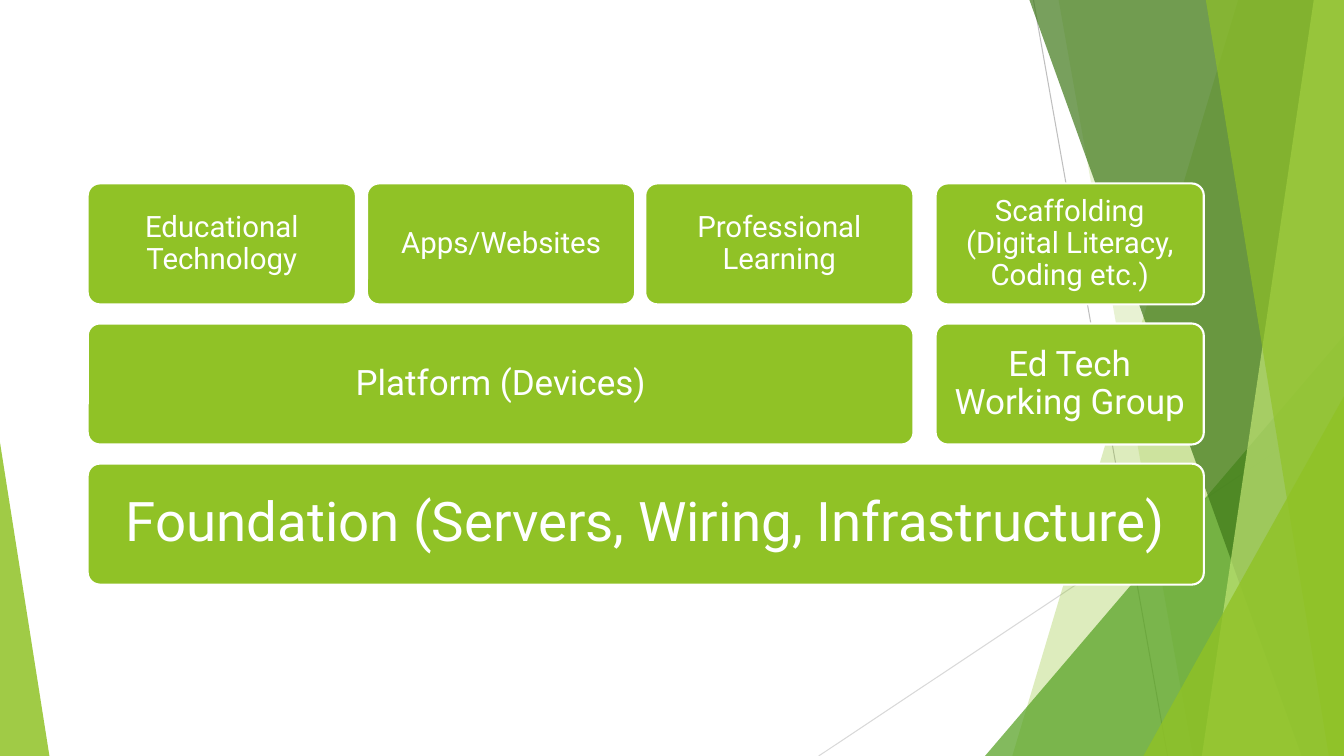
from lxml import etree
from pptx import Presentation
from pptx.dml.color import RGBColor
from pptx.enum.shapes import MSO_CONNECTOR, MSO_SHAPE
from pptx.enum.text import MSO_ANCHOR, PP_ALIGN
from pptx.oxml.ns import qn
from pptx.util import Inches, Pt

LINE = MSO_CONNECTOR.STRAIGHT
TRIANGLE, ROUNDED = MSO_SHAPE.ISOSCELES_TRIANGLE, MSO_SHAPE.ROUNDED_RECTANGLE
MIDDLE, CENTER = MSO_ANCHOR.MIDDLE, PP_ALIGN.CENTER

GREEN, WHITE = "90C226", "FFFFFF"
FONT = "Roboto"
W, H = 13.33, 7.5

# Block grid: four columns, the last one set apart, and three rows
COL_X = [0.87, 3.64, 6.4, 9.28]
COL_W = 2.66
ROW_Y, ROW_PITCH, ROW_H = 1.82, 1.39, 1.2

# Row, first column, last column, text, size, inset
BLOCKS = [
    (2, 0, 3, "Foundation (Servers, Wiring, Infrastructure)", 39, 0.16),
    (1, 0, 2, "Platform (Devices)", 25, 0.1),
    (0, 0, 0, "Educational Technology", 21, 0.09),
    (0, 1, 1, "Apps/Websites", 21, 0.09),
    (0, 2, 2, "Professional Learning", 21, 0.09),
    (1, 3, 3, "Ed Tech Working Group", 25, 0.1),
    (0, 3, 3, "Scaffolding (Digital Literacy, Coding etc.)", 21, 0.09),
]


def rgb(color):
    return RGBColor.from_string(color)


def set_fill(sp, color, opacity=100):
    sp.shadow.inherit = False
    sp.fill.solid()
    sp.fill.fore_color.rgb = rgb(color)
    if opacity < 100:
        clr = sp.fill._xPr.find(qn("a:solidFill"))[0]
        etree.SubElement(clr, qn("a:alpha"), val=str(opacity * 1000))


def add_line(s, x1, y1, x2, y2, color):
    cn = s.shapes.add_connector(LINE, Inches(x1), Inches(y1), Inches(x2), Inches(y2))
    cn.line.color.rgb = rgb(color)
    cn.line.width = Pt(0.75)
    etree.SubElement(cn._element.spPr, qn("a:effectLst"))


def add_band(s, top_x, bottom_x, color, opacity):
    """Band from a slanted left edge to the right edge of the slide."""
    points = [(W, 0), (W, H), (bottom_x, H)]
    fb = s.shapes.build_freeform(Inches(top_x), 0)
    fb.add_line_segments([(Inches(x), Inches(y)) for x, y in points])
    sp = fb.convert_to_shape()
    set_fill(sp, color, opacity)
    sp.line.fill.background()


def add_triangle(s, x, y, w, apex, color, opacity):
    """Triangle standing on the bottom edge of the slide."""
    sp = s.shapes.add_shape(TRIANGLE, Inches(x), Inches(y), Inches(w), Inches(H - y))
    sp.adjustments[0] = apex
    set_fill(sp, color, opacity)
    sp.line.fill.background()


def add_block(s, row, first, last, text, size, inset):
    x, y = COL_X[first], ROW_Y + row * ROW_PITCH
    w = COL_X[last] + COL_W - x
    sp = s.shapes.add_shape(ROUNDED, Inches(x), Inches(y), Inches(w), Inches(ROW_H))
    sp.adjustments[0] = 0.1
    set_fill(sp, GREEN)
    sp.line.color.rgb = rgb(WHITE)
    sp.line.width = Pt(1.5)

    tf = sp.text_frame
    tf.word_wrap = True
    tf.vertical_anchor = MIDDLE
    for side in ("left", "top", "right", "bottom"):
        setattr(tf, f"margin_{side}", Inches(inset))
    p = tf.paragraphs[0]
    p.alignment = CENTER
    p.line_spacing = 0.9
    r = p.add_run()
    r.text = text
    for name, value in {"name": FONT, "size": Pt(size)}.items():
        setattr(r.font, name, value)
    r.font.color.rgb = rgb(WHITE)


def main():
    prs = Presentation()
    prs.slide_width, prs.slide_height = Inches(W), Inches(H)
    s = prs.slides.add_slide(prs.slide_layouts[6])

    # Background facets, back to front
    add_line(s, 10.25, 0, 11.58, H, "BFBFBF")
    add_line(s, W, 4.03, 8.12, H, "D9D9D9")
    add_band(s, 12.28, 10.04, GREEN, 30)
    add_band(s, 10.5, 11.83, GREEN, 20)
    add_triangle(s, 9.77, 3.33, 3.56, 1, "54A021", 72)
    add_band(s, 10.21, 12.91, "3F7819", 70)
    add_band(s, 13.03, 11.92, "C0E474", 70)
    add_band(s, 11.96, 13.18, GREEN, 65)
    add_triangle(s, 11.34, 3.93, 1.99, 1, GREEN, 80)
    add_triangle(s, 0, 4.39, 0.49, 0, GREEN, 85)

    # Stacked blocks
    for block in BLOCKS:
        add_block(s, *block)

    prs.save("out.pptx")


if __name__ == "__main__":
    main()
